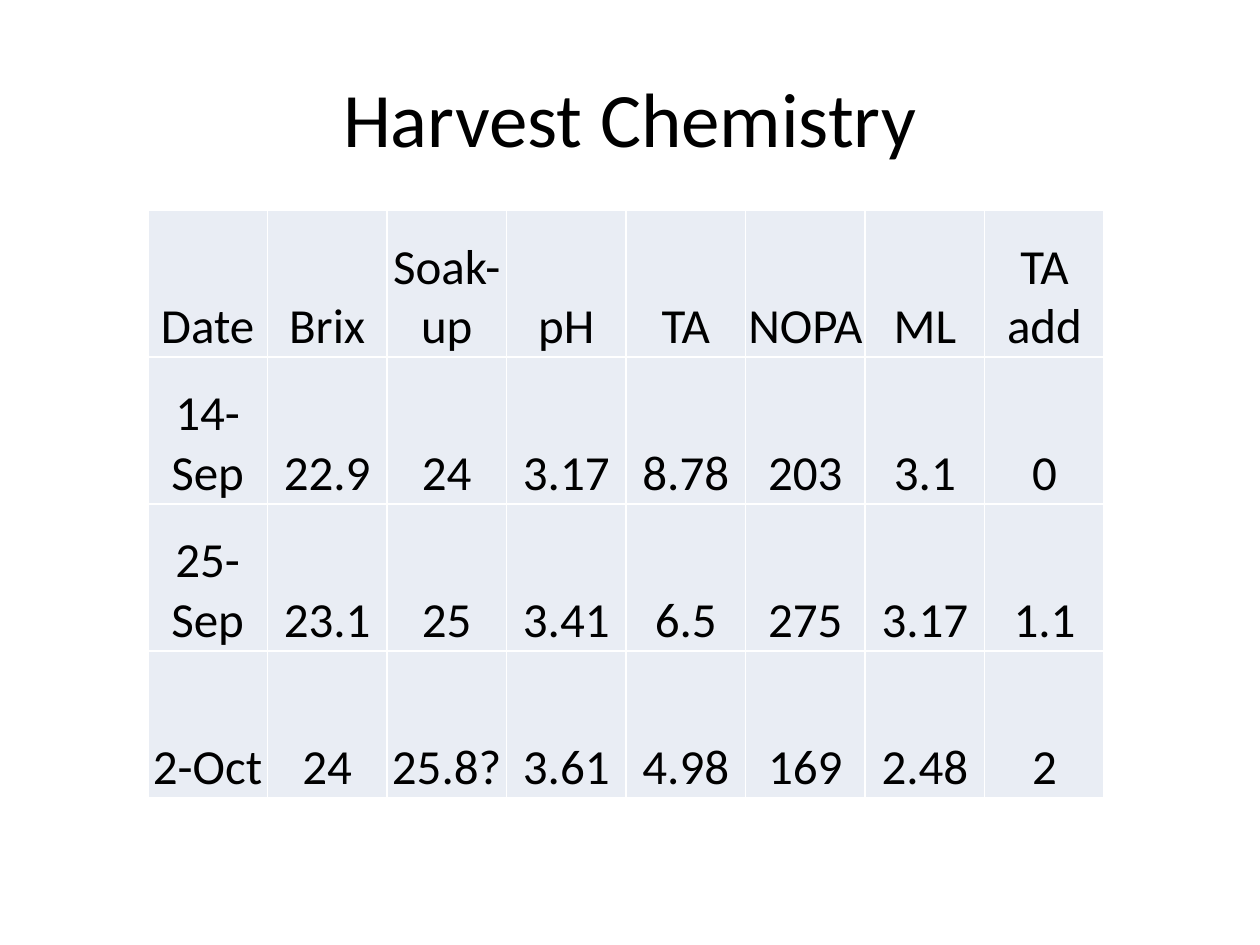
from lxml import etree
from pptx import Presentation
from pptx.dml.color import RGBColor
from pptx.enum.text import MSO_ANCHOR, PP_ALIGN
from pptx.oxml.ns import qn
from pptx.util import Cm, Pt

CENTER = PP_ALIGN.CENTER
MIDDLE, BOTTOM = MSO_ANCHOR.MIDDLE, MSO_ANCHOR.BOTTOM

TITLE = "Harvest Chemistry"
ROWS = [
    ("Date", "Brix", "Soak-up", "pH", "TA", "NOPA", "ML", "TA add"),
    ("14-Sep", "22.9", "24", "3.17", "8.78", "203", "3.1", "0"),
    ("25-Sep", "23.1", "25", "3.41", "6.5", "275", "3.17", "1.1"),
    ("2-Oct", "24", "25.8?", "3.61", "4.98", "169", "2.48", "2"),
]
FONT = "Calibri"
BLACK, WHITE, PALE_BLUE = "000000", "FFFFFF", "E9EDF4"
COLUMN_WIDTH, ROW_HEIGHT = 2.41, 2.96
CELL_MARGIN = Cm(0.02)


def color(code):
    return RGBColor.from_string(code)


def write(frame, text, size):
    para = frame.paragraphs[0]
    para.text = text
    para.alignment = CENTER
    para.font.name = FONT
    para.font.size = Pt(size)
    para.font.bold = False
    para.font.color.rgb = color(BLACK)


def add_borders(cell, code, width):
    """Draw all four sides; call before filling, as lines precede the fill."""
    properties = cell._tc.get_or_add_tcPr()
    for side in ("a:lnL", "a:lnR", "a:lnT", "a:lnB"):
        line = etree.SubElement(properties, qn(side), w=str(Pt(width)))
        fill = etree.SubElement(line, qn("a:solidFill"))
        etree.SubElement(fill, qn("a:srgbClr"), val=code)


def add_title(page):
    box = page.shapes.add_textbox(Cm(1.27), Cm(0.76), Cm(22.86), Cm(3.18))
    frame = box.text_frame
    frame.word_wrap = True
    frame.vertical_anchor = MIDDLE
    write(frame, TITLE, 44)


def add_harvest_table(page):
    row_count, column_count = len(ROWS), len(ROWS[0])
    table = page.shapes.add_table(
        row_count, column_count, Cm(2.98), Cm(4.24),
        Cm(COLUMN_WIDTH * column_count), Cm(ROW_HEIGHT * row_count)).table
    table.first_row = False
    table.horz_banding = False
    for r, values in enumerate(ROWS):
        for c, value in enumerate(values):
            cell = table.cell(r, c)
            cell.margin_left = cell.margin_right = cell.margin_top = CELL_MARGIN
            cell.margin_bottom = 0
            cell.vertical_anchor = BOTTOM
            add_borders(cell, WHITE, 1)
            cell.fill.solid()
            cell.fill.fore_color.rgb = color(PALE_BLUE)
            write(cell.text_frame, value, 28)


def main():
    deck = Presentation()
    deck.slide_width, deck.slide_height = Cm(25.4), Cm(19.05)
    page = deck.slides.add_slide(deck.slide_layouts[6])
    add_title(page)
    add_harvest_table(page)
    deck.save("out.pptx")


if __name__ == "__main__":
    main()
